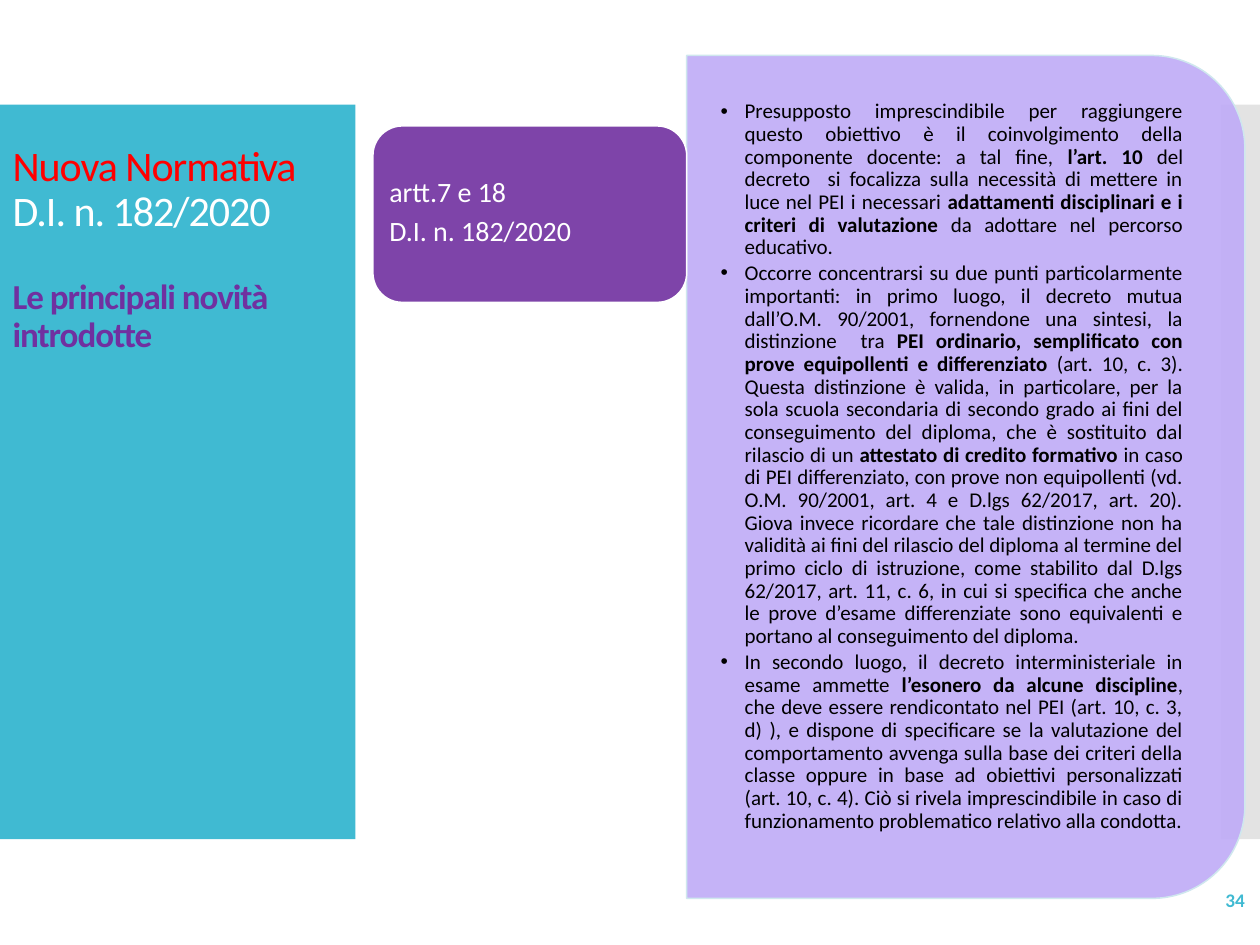
from lxml.etree import SubElement
from pptx import Presentation
from pptx.dml.color import RGBColor
from pptx.enum.shapes import MSO_SHAPE as Shape
from pptx.enum.text import MSO_ANCHOR as Anchor, MSO_AUTO_SIZE as AutoSize, PP_ALIGN as Align
from pptx.oxml.ns import qn
from pptx.util import Inches, Pt

FONT = "Calibri"
TEAL = RGBColor(0x40, 0xBA, 0xD2)
GRAY = RGBColor(0xC8, 0xC8, 0xC8)
LILAC = RGBColor(0xBF, 0xAB, 0xF7)
PALE = RGBColor(0xCF, 0xE7, 0xEE)
PURPLE = RGBColor(0x70, 0x30, 0xA0)
RED = RGBColor(0xFF, 0x00, 0x00)
WHITE = RGBColor(0xFF, 0xFF, 0xFF)
BLACK = RGBColor(0x00, 0x00, 0x00)

TITLE_LINES = [("Nuova Normativa", RED), ("D.I. n. 182/2020", WHITE)]
SUBTITLE = "Le principali novità introdotte"
CARD_LINES = ["artt.7 e 18 ", "D.I. n. 182/2020"]
PAGE_NUMBER = "34"
POINTS = [
    [("Presupposto imprescindibile per raggiungere questo obiettivo è il coinvolgimento della "
      "componente docente: a tal fine, ", False),
     ("l’art. 10 ", True),
     ("del decreto  si focalizza sulla necessità di mettere in luce nel PEI i necessari ", False),
     ("adattamenti disciplinari e i criteri di valutazione ", True),
     ("da adottare nel percorso educativo.", False)],
    [("Occorre concentrarsi su due punti particolarmente importanti: in primo luogo, il decreto "
      "mutua dall’O.M. 90/2001, fornendone una sintesi, la distinzione  tra ", False),
     ("PEI ordinario, semplificato con prove equipollenti e differenziato", True),
     (" (art. 10, c. 3). Questa distinzione è valida, in particolare, per la sola scuola "
      "secondaria di secondo grado ai fini del conseguimento del diploma, che è sostituito dal "
      "rilascio di un ", False),
     ("attestato di credito formativo ", True),
     ("in caso di PEI differenziato, con prove non equipollenti (vd. O.M. 90/2001, art. 4 e "
      "D.lgs 62/2017, art. 20). Giova invece ricordare che tale distinzione non ha validità ai "
      "fini del rilascio del diploma al termine del primo ciclo di istruzione, come stabilito "
      "dal D.lgs 62/2017, art. 11, c. 6, in cui si specifica che anche le prove d’esame "
      "differenziate sono equivalenti e portano al conseguimento del diploma.", False)],
    [("In secondo luogo, il decreto interministeriale in esame ammette ", False),
     ("l’esonero da alcune discipline", True),
     (", che deve essere rendicontato nel PEI (art. 10, c. 3, d) ), e dispone di specificare se "
      "la valutazione del comportamento avvenga sulla base dei criteri della classe oppure in "
      "base ad obiettivi personalizzati (art. 10, c. 4). Ciò si rivela imprescindibile in caso "
      "di funzionamento problematico relativo alla condotta.", False)],
]


def add_block(page, preset, place, color, opacity=100, line=None):
    block = page.shapes.add_shape(preset, *map(Inches, place))
    block.shadow.inherit = False
    block.fill.solid()
    block.fill.fore_color.rgb = color
    if line:
        block.line.color.rgb = line
        block.line.width = Pt(0.85)
    else:
        block.line.fill.background()
    if opacity < 100:
        tint = block.fill._xPr.find(qn("a:solidFill"))[0]
        SubElement(tint, qn("a:alpha")).set("val", str(opacity * 1000))
    return block


def set_frame(box, anchor, insets):
    frame = box.text_frame
    frame.word_wrap = True
    frame.auto_size = AutoSize.NONE
    frame.vertical_anchor = anchor
    frame.margin_left, frame.margin_top, frame.margin_right, frame.margin_bottom = map(Inches, insets)
    return frame


def add_text(page, place, anchor, insets):
    return set_frame(page.shapes.add_textbox(*map(Inches, place)), anchor, insets)


def add_para(frame, index, align, after=0):
    para = frame.add_paragraph() if index else frame.paragraphs[0]
    para.alignment = align
    para.line_spacing = 0.9
    para.space_before = Pt(0)
    para.space_after = Pt(after)
    return para


def add_span(para, text, size, color, bold=False, spacing=None):
    span = para.add_run()
    span.text = text
    font = span.font
    font.name, font.size, font.bold = FONT, Pt(size), bold
    font.color.rgb = color
    if spacing:
        span._r.get_or_add_rPr().set("spc", str(spacing))


def add_bullet(para):
    props = para._p.get_or_add_pPr()
    props.set("marL", str(Inches(0.19)))
    props.set("indent", str(Inches(-0.19)))
    SubElement(props, qn("a:buFont")).set("typeface", "Arial")
    SubElement(props, qn("a:buChar")).set("char", "•")


def fill_title(title):
    title.left, title.top, title.width, title.height = map(Inches, (0, 0.68, 2.7, 3.31))
    frame = set_frame(title, Anchor.TOP, (0.1, 0.47, 0.1, 0.05))
    heading = add_para(frame, 0, Align.LEFT)
    for index, (text, color) in enumerate(TITLE_LINES):
        if index:
            heading.add_line_break()
        add_span(heading, text, 24, color, spacing=-60)
    subtitle = add_para(frame, 1, Align.LEFT)
    subtitle.space_before = Pt(25)
    add_span(subtitle, SUBTITLE, 20, PURPLE, True, -60)


def main():
    """Build the slide on the main changes introduced by the decree."""
    deck = Presentation()
    deck.slide_width, deck.slide_height = Inches(10), Inches(7.5)
    page = deck.slides.add_slide(deck.slide_layouts[5])
    title = page.shapes.title

    add_block(page, Shape.RECTANGLE, (0, 0.83, 2.82, 5.83), TEAL)
    add_block(page, Shape.RECTANGLE, (9.69, 0.83, 0.31, 5.83), GRAY, 50)
    title.element.getparent().append(title.element)
    fill_title(title)

    panel = add_block(page, Shape.ROUND_2_SAME_RECTANGLE, (4.32, 1.57, 6.69, 4.43), LILAC, 90, PALE)
    panel.rotation = 90
    body = add_text(page, (5.45, 0.66, 4.21, 6.26), Anchor.TOP, (0.27, 0.14, 0.27, 0.14))
    for index, spans in enumerate(POINTS):
        para = add_para(body, index, Align.JUSTIFY, 1.8)
        add_bullet(para)
        for text, bold in spans:
            add_span(para, text, 12, BLACK, bold)

    add_block(page, Shape.ROUNDED_RECTANGLE, (2.96, 1, 2.49, 1.4), PURPLE, 90, WHITE)
    card = add_text(page, (3.02, 1.06, 2.36, 1.26), Anchor.MIDDLE, (0.07, 0.03, 0.07, 0.03))
    for index, text in enumerate(CARD_LINES):
        add_span(add_para(card, index, Align.JUSTIFY, 5.4), text, 16, WHITE)

    number = add_text(page, (8.72, 6.95, 1.26, 0.4), Anchor.MIDDLE, (0.1, 0.05, 0.1, 0.05))
    add_span(add_para(number, 0, Align.RIGHT), PAGE_NUMBER, 11, TEAL, True)
    deck.save("out.pptx")


if __name__ == "__main__":
    main()
